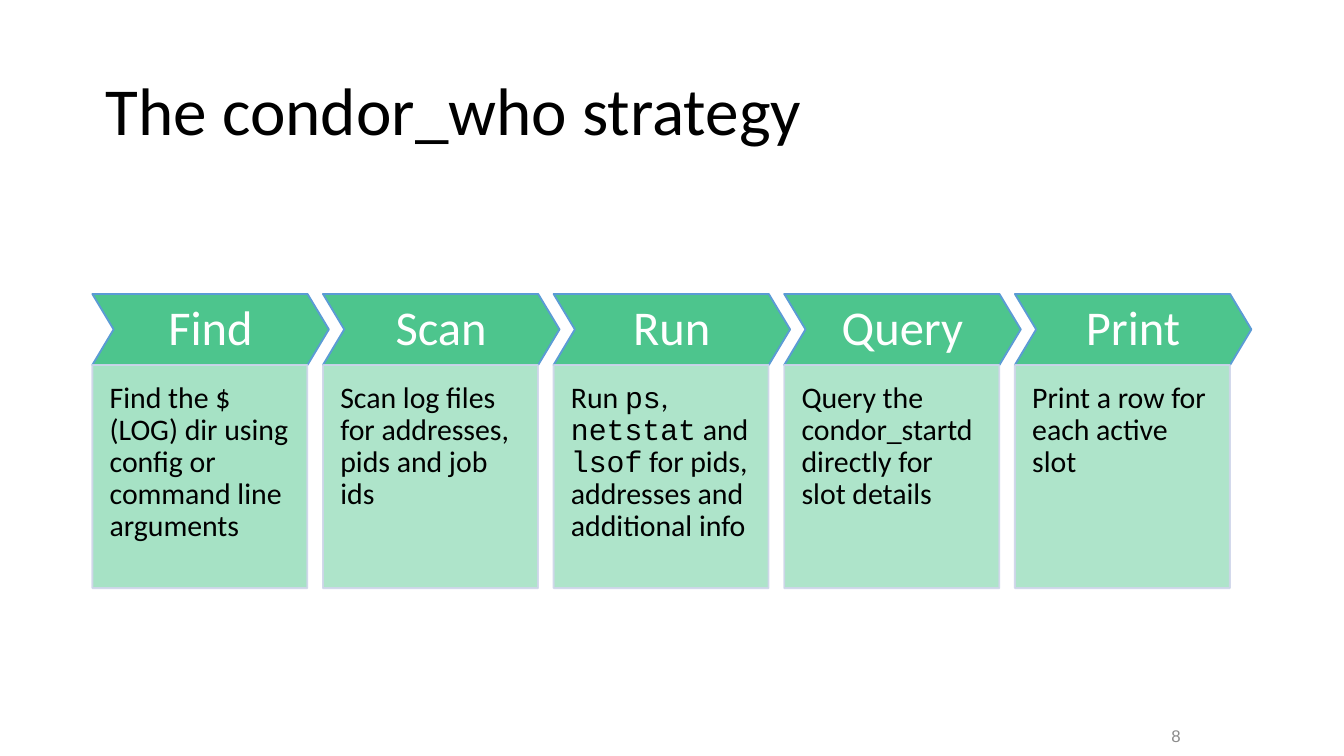
from dataclasses import dataclass

from lxml.etree import SubElement
from pptx import Presentation
from pptx.dml.color import RGBColor
from pptx.enum.shapes import MSO_SHAPE
from pptx.enum.text import MSO_ANCHOR, MSO_AUTO_SIZE, PP_ALIGN
from pptx.oxml.ns import qn
from pptx.util import Pt


@dataclass(frozen=True)
class Theme:
    black: str = "000000"
    white: str = "FFFFFF"
    header_fill: str = "4DC58D"
    header_line: str = "5B9BD5"
    card_fill: str = "A6E2C5"
    card_line: str = "CFD5EA"
    number_grey: str = "8C8C8C"
    sans: str = "Calibri"
    mono: str = "Courier New"
    number_font: str = "Arial"
    title_size: int = 36
    header_size: int = 26
    card_size: int = 16
    number_size: int = 9


THEME = Theme()

# Step grid, in points
LEFT, TOP, PITCH = 49.5, 157.5, 123.55
HEADER_WIDTH, HEADER_HEIGHT = 126.7, 38
CARD_WIDTH, CARD_HEIGHT = 115.2, 119.6

# Heading and description; commands are marked with backticks
STEPS = [
    ("Find", "Find the $(LOG) dir using config or command line arguments"),
    ("Scan", "Scan log files for addresses, pids and job ids"),
    ("Run", "Run `ps`, `netstat` and `lsof` for pids, addresses and additional info"),
    ("Query", "Query the condor_startd directly for slot details"),
    ("Print", "Print a row for each active slot"),
]


def style_run(run, size, color, font=THEME.sans):
    run.font.size = Pt(size)
    run.font.name = font
    run.font.color.rgb = RGBColor.from_string(color)


def set_opacity(fill_parent, percent):
    color = fill_parent.find(qn("a:solidFill"))[0]
    SubElement(color, qn("a:alpha")).set("val", str(percent * 1000))


def set_margins(frame, left, top, right, bottom):
    frame.margin_left, frame.margin_top = Pt(left), Pt(top)
    frame.margin_right, frame.margin_bottom = Pt(right), Pt(bottom)


def add_panel(slide, preset, box, fill, line):
    panel = slide.shapes.add_shape(preset, *map(Pt, box))
    panel.shadow.inherit = False
    panel.fill.solid()
    panel.fill.fore_color.rgb = RGBColor.from_string(fill)
    panel.line.color.rgb = RGBColor.from_string(line)
    panel.line.width = Pt(1)
    panel.text_frame.word_wrap = True
    return panel


def add_title(slide, wording):
    title = slide.shapes.title
    title.left, title.top = Pt(49.5), Pt(21.6)
    title.width, title.height = Pt(621), Pt(78.3)
    frame = title.text_frame
    frame.text = wording
    frame.auto_size = MSO_AUTO_SIZE.NONE
    frame.vertical_anchor = MSO_ANCHOR.MIDDLE
    heading = frame.paragraphs[0]
    heading.alignment = PP_ALIGN.LEFT
    heading.line_spacing = 0.9
    style_run(heading.runs[0], THEME.title_size, THEME.black)


def add_header(slide, left, wording):
    header = add_panel(slide, MSO_SHAPE.CHEVRON,
                       (left, TOP, HEADER_WIDTH, HEADER_HEIGHT),
                       THEME.header_fill, THEME.header_line)
    header.adjustments[0] = 0.3
    frame = header.text_frame
    set_margins(frame, 5, 5, 5, 5)
    frame.vertical_anchor = MSO_ANCHOR.MIDDLE
    frame.text = wording
    label = frame.paragraphs[0]
    label.alignment = PP_ALIGN.CENTER
    label.line_spacing = 0.9
    style_run(label.runs[0], THEME.header_size, THEME.white)


def add_card(slide, left, wording, opacity):
    card = add_panel(slide, MSO_SHAPE.RECTANGLE,
                     (left, TOP + HEADER_HEIGHT, CARD_WIDTH, CARD_HEIGHT),
                     THEME.card_fill, THEME.card_line)
    properties = card.fill._xPr
    set_opacity(properties, opacity)
    set_opacity(properties.find(qn("a:ln")), 90)
    frame = card.text_frame
    set_margins(frame, 9.3, 9.3, 9.3, 18)
    frame.vertical_anchor = MSO_ANCHOR.TOP
    description = frame.paragraphs[0]
    description.alignment = PP_ALIGN.LEFT
    description.line_spacing = 0.9
    # Every second piece lies between backticks
    for index, piece in enumerate(wording.split("`")):
        run = description.add_run()
        run.text = piece
        style_run(run, THEME.card_size, THEME.black,
                  THEME.mono if index % 2 else THEME.sans)


def add_slide_number(slide, number):
    box = slide.shapes.add_textbox(Pt(589.5), Pt(381.6), Pt(81), Pt(21.6))
    frame = box.text_frame
    frame.word_wrap = True
    frame.vertical_anchor = MSO_ANCHOR.BOTTOM
    frame.text = number
    frame.paragraphs[0].alignment = PP_ALIGN.CENTER
    style_run(frame.paragraphs[0].runs[0], THEME.number_size,
              THEME.number_grey, THEME.number_font)


def main():
    deck = Presentation()
    deck.slide_width, deck.slide_height = Pt(720), Pt(405)
    slide = deck.slides.add_slide(deck.slide_layouts[5])

    add_title(slide, "The condor_who strategy")

    # Five steps; the first card is solid, the rest slightly transparent
    for index, (heading, description) in enumerate(STEPS):
        left = LEFT + index * PITCH
        add_header(slide, left, heading)
        add_card(slide, left, description, 90 if index else 100)

    add_slide_number(slide, "8")
    deck.save("out.pptx")


if __name__ == "__main__":
    main()
